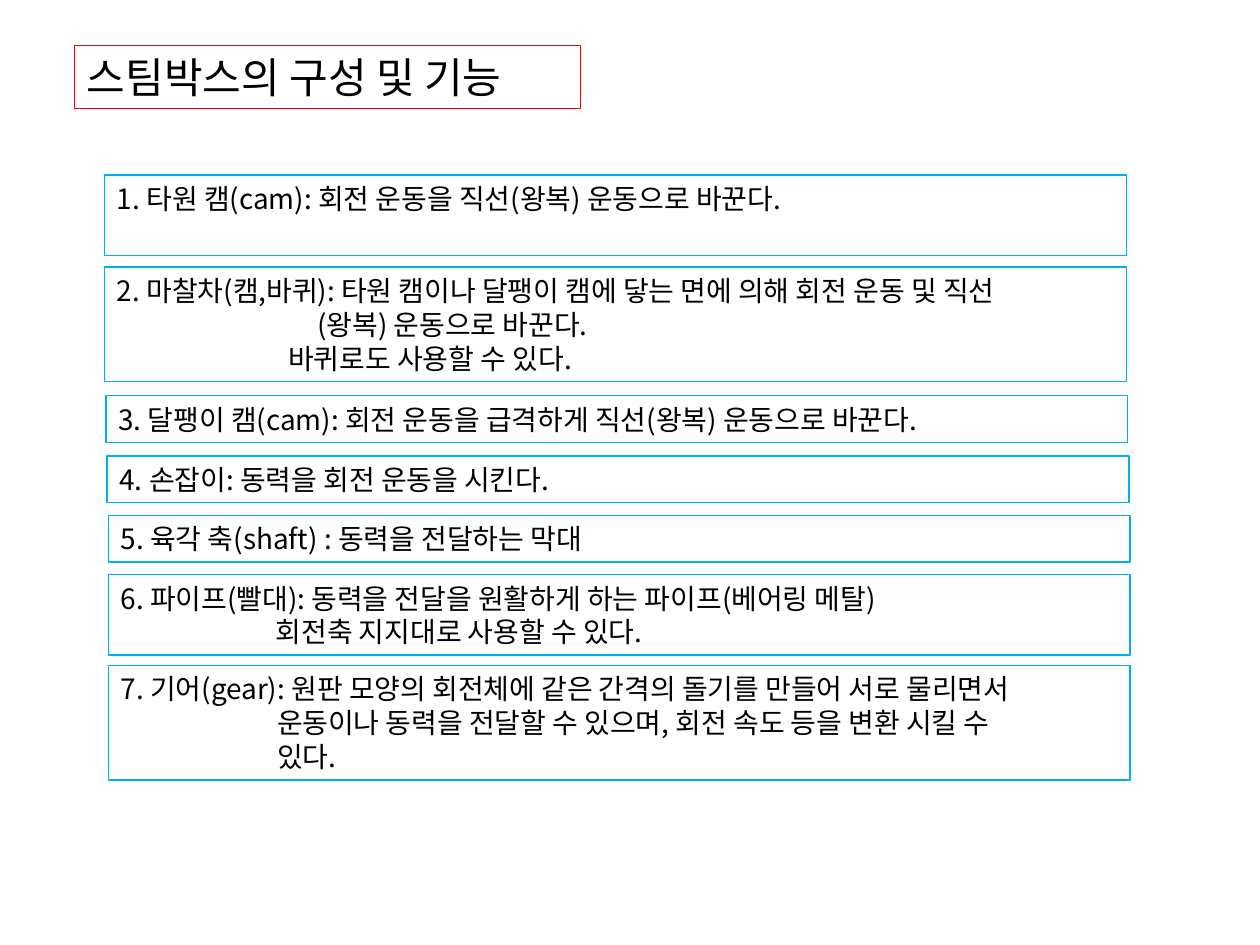
from pptx import Presentation
from pptx.dml.color import RGBColor
from pptx.enum.shapes import MSO_SHAPE
from pptx.enum.text import MSO_ANCHOR, PP_ALIGN
from pptx.util import Inches, Pt
from lxml import etree

RECT = MSO_SHAPE.RECTANGLE
TOP = MSO_ANCHOR.TOP
LEFT = PP_ALIGN.LEFT
A = "http://schemas.openxmlformats.org/drawingml/2006/main"

THEME = {
    "font": "Noto Sans CJK KR",
    "text": RGBColor(0x00, 0x00, 0x00),
    "title_line": RGBColor(0xFF, 0x00, 0x00),
    "part_line": RGBColor(0x00, 0xB0, 0xF0),
    "title_size": 24,
    "part_size": 16,
    "line_width": 0.75,
    "leading": 1.21,
}

TITLE = "스팀박스의 구성 및 기능"
TITLE_BOX = (0.59, 0.36, 4.02, 0.5)

# Each part: left, top, rows of height, lines as (indent, text)
PARTS = [
    (0.83, 1.39, 2, [(0, "1. 타원 캠(cam): 회전 운동을 직선(왕복) 운동으로 바꾼다.")]),
    (0.83, 2.12, 3, [
        (0, "2. 마찰차(캠,바퀴): 타원 캠이나 달팽이 캠에 닿는 면에 의해 회전 운동 및 직선"),
        (1.59, "(왕복) 운동으로 바꾼다."),
        (1.36, "바퀴로도 사용할 수 있다."),
    ]),
    (0.84, 3.14, 1, [(0, "3. 달팽이 캠(cam): 회전 운동을 급격하게 직선(왕복) 운동으로 바꾼다.")]),
    (0.85, 3.62, 1, [(0, "4. 손잡이: 동력을 회전 운동을 시킨다.")]),
    (0.86, 4.09, 1, [(0, "5. 육각 축(shaft) : 동력을 전달하는 막대")]),
    (0.86, 4.56, 2, [
        (0, "6. 파이프(빨대): 동력을 전달을 원활하게 하는 파이프(베어링 메탈)"),
        (1.23, "회전축 지지대로 사용할 수 있다."),
    ]),
    (0.86, 5.28, 3, [
        (0, "7. 기어(gear): 원판 모양의 회전체에 같은 간격의 돌기를 만들어 서로 물리면서"),
        (1.24, "운동이나 동력을 전달할 수 있으며, 회전 속도 등을 변환 시킬 수"),
        (1.24, "있다."),
    ]),
]
PART_WIDTH, ROW_HEIGHT, PADDING = 8.11, 0.27, 0.1


def add_box(slide, box, lines, size, line_color):
    """Add an outlined box holding one paragraph per (indent, text) line."""
    sp = slide.shapes.add_shape(RECT, *map(Inches, box))
    sp.shadow.inherit = False
    sp.fill.background()
    sp.line.color.rgb = line_color
    sp.line.width = Pt(THEME["line_width"])
    tf = sp.text_frame
    tf.word_wrap = True
    tf.vertical_anchor = TOP
    tf.text = "\n".join(text for _, text in lines)
    for p, (indent, _) in zip(tf.paragraphs, lines):
        p.alignment = LEFT
        p.line_spacing = Pt(round(size * THEME["leading"], 1))
        p._p.get_or_add_pPr().set("marL", str(Inches(indent)))
        font = p.runs[0].font
        font.size = Pt(size)
        font.name = THEME["font"]
        font.color.rgb = THEME["text"]
        east_asian = etree.SubElement(font._element, f"{{{A}}}ea")
        east_asian.set("typeface", THEME["font"])


prs = Presentation()
prs.slide_width, prs.slide_height = Inches(10), Inches(7.5)
s = prs.slides.add_slide(prs.slide_layouts[6])

for left, top, rows, lines in PARTS:
    box = (left, top, PART_WIDTH, rows * ROW_HEIGHT + PADDING)
    add_box(s, box, lines, THEME["part_size"], THEME["part_line"])
add_box(s, TITLE_BOX, [(0, TITLE)], THEME["title_size"], THEME["title_line"])

prs.save("out.pptx")
